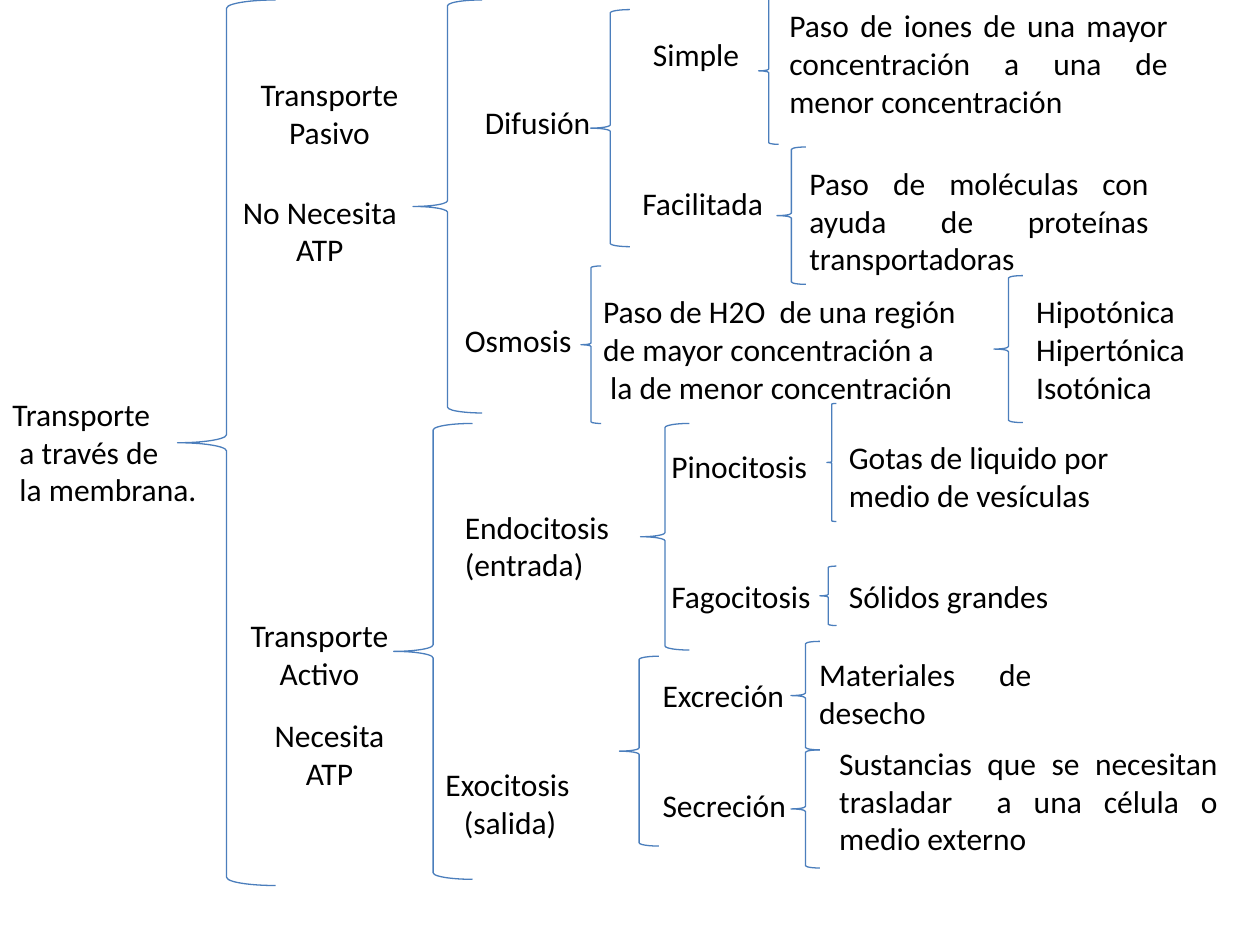
from pptx import Presentation
from pptx.dml.color import RGBColor
from pptx.enum.shapes import MSO_SHAPE
from pptx.enum.text import PP_ALIGN
from pptx.util import Pt

BLACK = RGBColor(0x00, 0x00, 0x00)
BLUE = RGBColor(0x4B, 0x7E, 0xBC)
LEFT, CENTER, JUSTIFY = PP_ALIGN.LEFT, PP_ALIGN.CENTER, PP_ALIGN.JUSTIFY
LEFT_BRACE = MSO_SHAPE.LEFT_BRACE

# Box heights for one, two and three lines of text
ONE, TWO, THREE = 29, 51, 73

deck = Presentation()
deck.slide_width, deck.slide_height = Pt(720), Pt(540)
page = deck.slides.add_slide(deck.slide_layouts[6])


def add_text(text, left, top, width, height, align=LEFT, size=18, font="Calibri", color=BLACK):
    box = page.shapes.add_textbox(Pt(left), Pt(top), Pt(width), Pt(height))
    frame = box.text_frame
    frame.word_wrap = True
    frame.text = text
    for para in frame.paragraphs:
        para.alignment = align
        para.font.size = Pt(size)
        para.font.name = font
        para.font.color.rgb = color
    return box


# Braces, from the root to the leaves: left, top, width, height
braces = [
    (101.5, 0, 56, 506),  # membrane transport
    (236, 0, 39.5, 236),  # passive
    (225, 242, 45, 260.5),  # active
    (337.5, 5.5, 22.5, 135.5),  # diffusion
    (332, 152, 11.5, 90),  # osmosis
    (366, 242, 28, 129.5),  # endocytosis
    (354, 375, 22.5, 108.5),  # exocytosis
    (433.5, -1.5, 11.5, 84),  # simple
    (444, 84, 16.5, 78.5),  # facilitated
    (568, 157.5, 16.5, 84),  # kinds of osmosis
    (472.5, 230.5, 5.5, 67.5),  # pinocytosis
    (468.5, 323.5, 9.5, 34),  # phagocytosis
    (452, 366.5, 16.5, 62),  # excretion
    (452, 428.5, 16.5, 67.5),  # secretion
]
for left, top, width, height in braces:
    brace = page.shapes.add_shape(LEFT_BRACE, Pt(left), Pt(top), Pt(width), Pt(height))
    brace.shadow.inherit = False
    brace.fill.background()
    brace.line.color.rgb = BLUE
    brace.line.width = Pt(0.75)

# Labels: text, left, top, width, height, alignment
labels = [
    # Root
    ("Transporte\n a través de\n la membrana.", 0, 222, 140.5, THREE, LEFT),
    # Passive and active transport
    ("Transporte\nPasivo", 135, 39.5, 106.5, TWO, CENTER),
    ("No Necesita\nATP", 129.5, 106.5, 106.5, TWO, CENTER),
    ("Transporte\nActivo", 134.5, 348.5, 96, TWO, CENTER),
    ("Necesita\nATP", 135, 405.5, 106.5, TWO, CENTER),
    # Mechanisms
    ("Difusión", 270, 55.5, 101.5, ONE, LEFT),
    ("Osmosis", 258.5, 180, 90, ONE, LEFT),
    ("Endocitosis\n(entrada)", 258.5, 286.5, 106.5, TWO, LEFT),
    # Kinds of each mechanism
    ("Simple", 366, 16.5, 101.5, ONE, LEFT),
    ("Facilitada", 360, 101.5, 106.5, ONE, LEFT),
    ("Pinocitosis", 376.5, 252, 96, ONE, LEFT),
    ("Fagocitosis", 376.5, 326, 96, ONE, LEFT),
    ("Excreción", 371.5, 383, 96, ONE, LEFT),
    ("Secreción", 371.5, 445.5, 101.5, ONE, LEFT),
    # Descriptions
    ("Paso de iones de una mayor concentración a una de menor concentración",
     444, 0, 230.5, THREE, JUSTIFY),
    ("Paso de moléculas con ayuda de proteínas transportadoras",
     455.5, 90, 208, THREE, JUSTIFY),
    ("Paso de H2O  de una región\nde mayor concentración a\n la de menor concentración",
     337.5, 163.5, 281.5, THREE, LEFT),
    ("Hipotónica\nHipertónica\nIsotónica", 585, 163.5, 118, THREE, LEFT),
    ("Gotas de liquido por medio de vesículas", 478, 247, 186, TWO, LEFT),
    ("Sólidos grandes", 478, 326, 140.5, ONE, LEFT),
    ("Materiales de desecho", 461, 371, 135.5, TWO, JUSTIFY),
    ("Sustancias que se necesitan trasladar  a una célula o medio externo",
     472.5, 421.5, 230.5, THREE, JUSTIFY),
]
for text, left, top, width, height, align in labels:
    add_text(text, left, top, width, height, align=align)

# Exocytosis: its second line is centred under the first
exocytosis = add_text("Exocitosis\n(salida)", 247.5, 433.5, 88, TWO)
exocytosis.text_frame.paragraphs[1].alignment = CENTER

deck.save("out.pptx")
